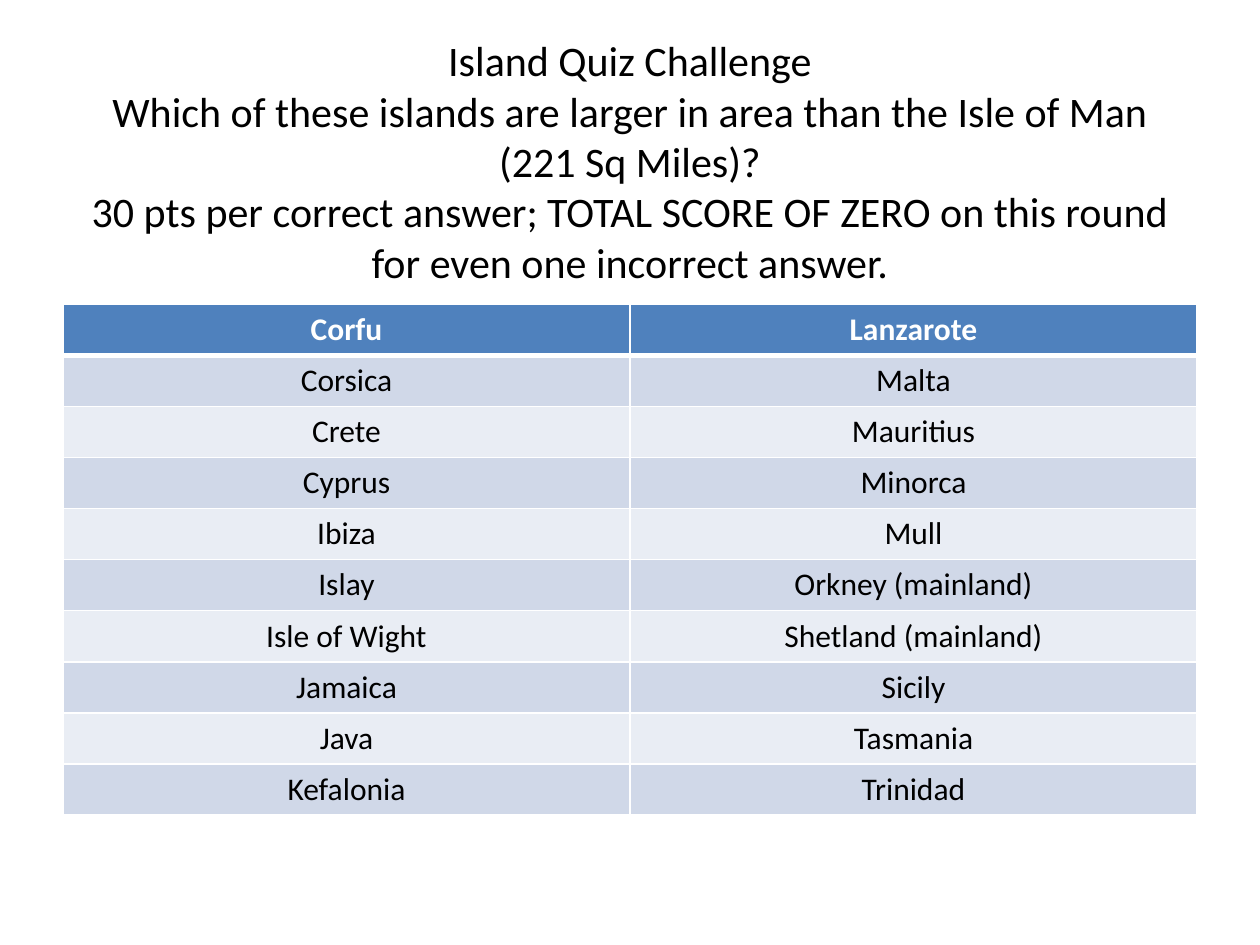
from lxml import etree
from pptx import Presentation
from pptx import util as u
from pptx.dml.color import RGBColor
from pptx.enum import text
from pptx.oxml import ns

COLORS = {"text": "000000", "header": "4F81BD", "header_text": "FFFFFF",
          "odd": "D0D8E8", "even": "E9EDF4", "border": "FFFFFF"}

TITLE = [
    "Island Quiz Challenge",
    "Which of these islands are larger in area than the Isle of Man (221 Sq Miles)?",
    "30 pts per correct answer; TOTAL SCORE OF ZERO on this round "
    "for even one incorrect answer.",
]
ISLANDS = [
    ("Corfu", "Lanzarote"),
    ("Corsica", "Malta"),
    ("Crete", "Mauritius"),
    ("Cyprus", "Minorca"),
    ("Ibiza", "Mull"),
    ("Islay", "Orkney (mainland)"),
    ("Isle of Wight", "Shetland (mainland)"),
    ("Jamaica", "Sicily"),
    ("Java", "Tasmania"),
    ("Kefalonia", "Trinidad"),
]


def write(tf, lines, size=18, color="text", bold=False, font="Calibri"):
    """Write lines as one centred paragraph with line breaks between them."""
    p = tf.paragraphs[0]
    p.alignment = text.PP_ALIGN.CENTER
    for i, line in enumerate(lines):
        if i:
            p.add_line_break()
        r = p.add_run()
        r.text = line
        r.font.name, r.font.size, r.font.bold = font, u.Pt(size), bold
        r.font.color.rgb = RGBColor.from_string(COLORS[color])


def set_bottom_border(cell, width):
    """Draw the cell's bottom border; borders come before the fill."""
    ln = etree.Element(ns.qn("a:lnB"), w=str(u.Pt(width)))
    fill = etree.SubElement(ln, ns.qn("a:solidFill"))
    etree.SubElement(fill, ns.qn("a:srgbClr"), val=COLORS["border"])
    cell._tc.get_or_add_tcPr().insert(0, ln)


class QuizSlide:
    left, width = 36, 648

    def __init__(self, prs):
        self.s = prs.slides.add_slide(prs.slide_layouts[5])

    def title(self, lines, top, height):
        sp = self.s.shapes.title
        sp.left, sp.top = u.Pt(self.left), u.Pt(top)
        sp.width, sp.height = u.Pt(self.width), u.Pt(height)
        tf = sp.text_frame
        tf.word_wrap = True
        tf.auto_size = text.MSO_AUTO_SIZE.NONE
        tf.vertical_anchor = text.MSO_ANCHOR.MIDDLE
        write(tf, lines, size=24)

    def table(self, rows, top, row_height):
        # The default table style supplies the thin white cell borders
        tbl = self.s.shapes.add_table(
            len(rows), len(rows[0]), u.Pt(self.left), u.Pt(top),
            u.Pt(self.width), u.Pt(row_height * len(rows))).table
        for i, row in enumerate(rows):
            header = i == 0
            fill = "header" if header else ("odd" if i % 2 else "even")
            for j, name in enumerate(row):
                cell = tbl.cell(i, j)
                cell.fill.solid()
                cell.fill.fore_color.rgb = RGBColor.from_string(COLORS[fill])
                write(cell.text_frame, [name], bold=header,
                      color="header_text" if header else "text")
                if header:
                    set_bottom_border(cell, 3)


def main():
    prs = Presentation()
    prs.slide_width, prs.slide_height = u.Pt(720), u.Pt(540)
    slide = QuizSlide(prs)

    # Question
    slide.title(TITLE, top=21.6, height=140.4)

    # Islands to choose from
    slide.table(ISLANDS, top=173.8, row_height=29.2)

    prs.save("out.pptx")


if __name__ == "__main__":
    main()
